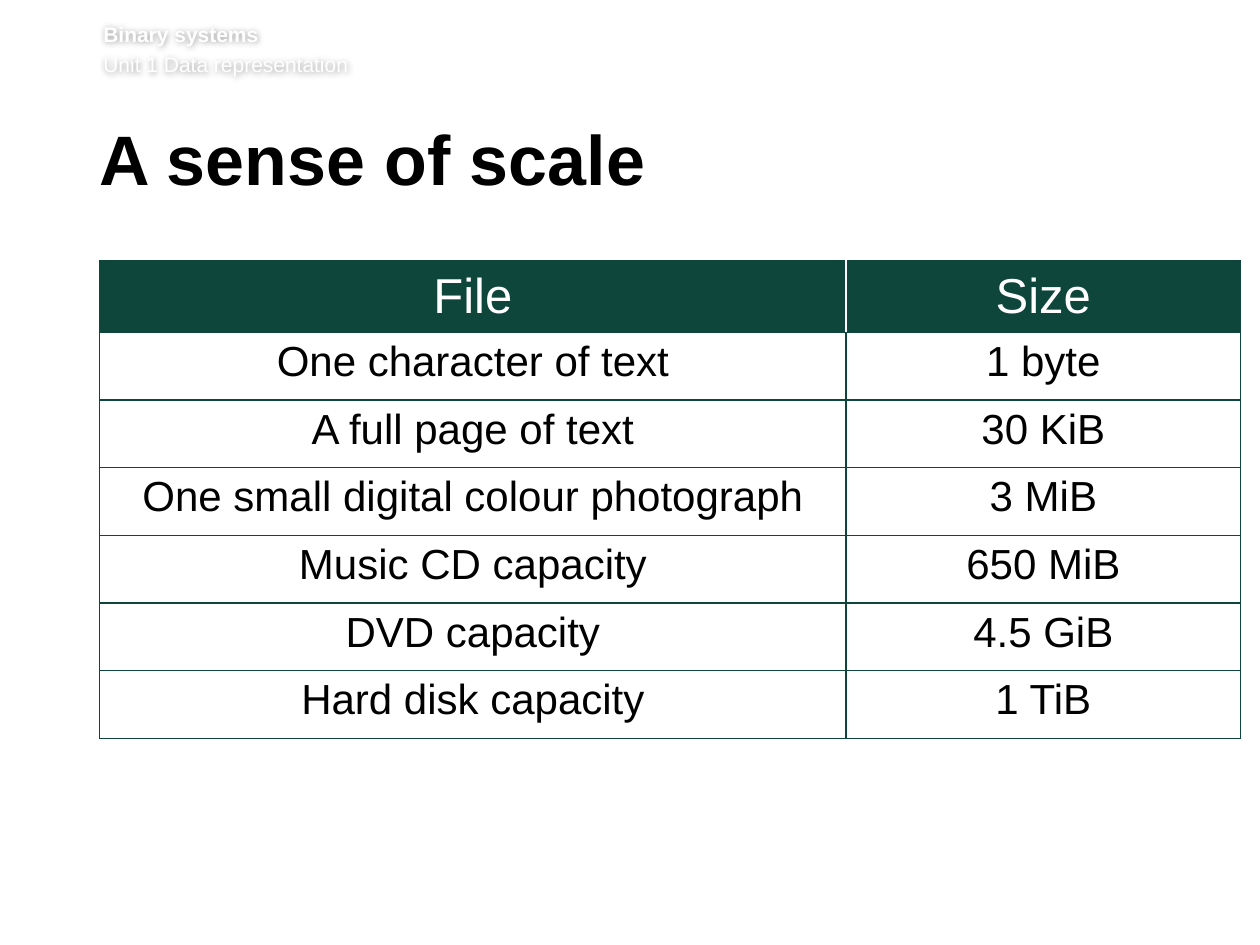
from dataclasses import dataclass

from lxml.etree import SubElement
from pptx import Presentation
from pptx.dml.color import RGBColor
from pptx.enum.text import MSO_ANCHOR, PP_ALIGN
from pptx.oxml import parse_xml
from pptx.oxml.ns import nsdecls, qn
from pptx.util import Inches, Pt


@dataclass(frozen=True)
class Theme:
    font: str = "Arial"
    green: str = "0E463C"
    white: str = "FFFFFF"
    black: str = "000000"
    header_size: int = 12
    title_size: int = 40
    heading_size: int = 28
    cell_size: int = 24
    border: int = 1


class ScaleSlide:
    def __init__(self, deck, theme):
        self.theme = theme
        self.width, self.height = deck.slide_width, deck.slide_height
        self.page = deck.slides.add_slide(deck.slide_layouts[6])

    def area(self, left, top, width, height):
        return (round(left * self.width), round(top * self.height),
                round(width * self.width), round(height * self.height))

    def style(self, para, size, color, bold=False):
        para.font.name = self.theme.font
        para.font.size = Pt(size)
        para.font.bold = bold
        para.font.color.rgb = RGBColor.from_string(color)

    def text_box(self, area, margins):
        box = self.page.shapes.add_textbox(*self.area(*area))
        frame = box.text_frame
        frame.word_wrap = True
        frame.vertical_anchor = MSO_ANCHOR.TOP
        (frame.margin_left, frame.margin_top,
         frame.margin_right, frame.margin_bottom) = map(Inches, margins)
        return box

    def running_header(self, chapter, unit, area):
        box = self.text_box(area, (0, 0, 0, 0.05))
        frame = box.text_frame
        frame.text = f"{chapter}\n{unit}"
        first, second = frame.paragraphs
        second.space_before = Pt(2.9)
        self.style(first, self.theme.header_size, self.theme.white, bold=True)
        self.style(second, self.theme.header_size, self.theme.white)
        box._element.spPr.append(parse_xml(
            f'<a:effectLst {nsdecls("a")}>'
            '<a:outerShdw blurRad="50800" dist="0" dir="0" algn="ctr" rotWithShape="0">'
            f'<a:srgbClr val="{self.theme.black}"><a:alpha val="40000"/></a:srgbClr>'
            '</a:outerShdw></a:effectLst>'))

    def title(self, text, area):
        para = self.text_box(area, (0, 0.05, 0.1, 0.05)).text_frame.paragraphs[0]
        para.text = text
        para.line_spacing = Pt(39)
        para.space_after = Pt(15)
        self.style(para, self.theme.title_size, self.theme.black, bold=True)

    def borders(self, cell, colors):
        properties = cell._tc.get_or_add_tcPr()
        for position, (side, color) in enumerate(colors.items()):
            line = parse_xml(f'<a:ln{side} {nsdecls("a")} w="{Pt(self.theme.border)}"/>')
            fill = SubElement(line, qn("a:solidFill"))
            SubElement(fill, qn("a:srgbClr"), val=color)
            properties.insert(position, line)

    def table(self, rows, area, shares):
        frame = self.page.shapes.add_table(len(rows), len(shares), *self.area(*area))
        table = frame.table
        for column, share in zip(table.columns, shares):
            column.width = round(frame.width * share)
        for row_index, row in enumerate(rows):
            for column_index, text in enumerate(row):
                self.cell(table.cell(row_index, column_index), text,
                          row_index == 0, column_index, len(shares) - 1)

    def cell(self, cell, text, heading, column, last):
        theme = self.theme
        cell.text = text
        cell.fill.solid()
        cell.fill.fore_color.rgb = RGBColor.from_string(theme.green if heading else theme.white)
        cell.vertical_anchor = MSO_ANCHOR.MIDDLE if heading else MSO_ANCHOR.TOP
        para = cell.text_frame.paragraphs[0]
        para.alignment = PP_ALIGN.CENTER
        self.style(para, theme.heading_size if heading else theme.cell_size,
                   theme.white if heading else theme.black)
        inner = theme.white if heading else theme.green
        self.borders(cell, {
            "L": inner if column > 0 else theme.green,
            "R": inner if column < last else theme.green,
            "T": theme.green,
            "B": theme.green,
        })


def main():
    deck = Presentation()
    deck.slide_width, deck.slide_height = Inches(10), Inches(7.5)
    slide = ScaleSlide(deck, Theme())
    sizes = [
        ("File", "Size"),
        ("One character of text", "1 byte"),
        ("A full page of text", "30 KiB"),
        ("One small digital colour photograph", "3 MiB"),
        ("Music CD capacity", "650 MiB"),
        ("DVD capacity", "4.5 GiB"),
        ("Hard disk capacity", "1 TiB"),
    ]
    left, width = 0.079, 0.855
    slide.running_header("Binary systems", "Unit 1 Data representation",
                         (0.082, 0.17 / 7.5, 0.882, 0.49 / 7.5))
    slide.table(sizes, (left, 2.07 / 7.5, width, 3.76 / 7.5), (0.693, 0.307))
    slide.title("A sense of scale", (left, 0.99 / 7.5, width, 0.73 / 7.5))
    deck.save("out.pptx")


if __name__ == "__main__":
    main()
